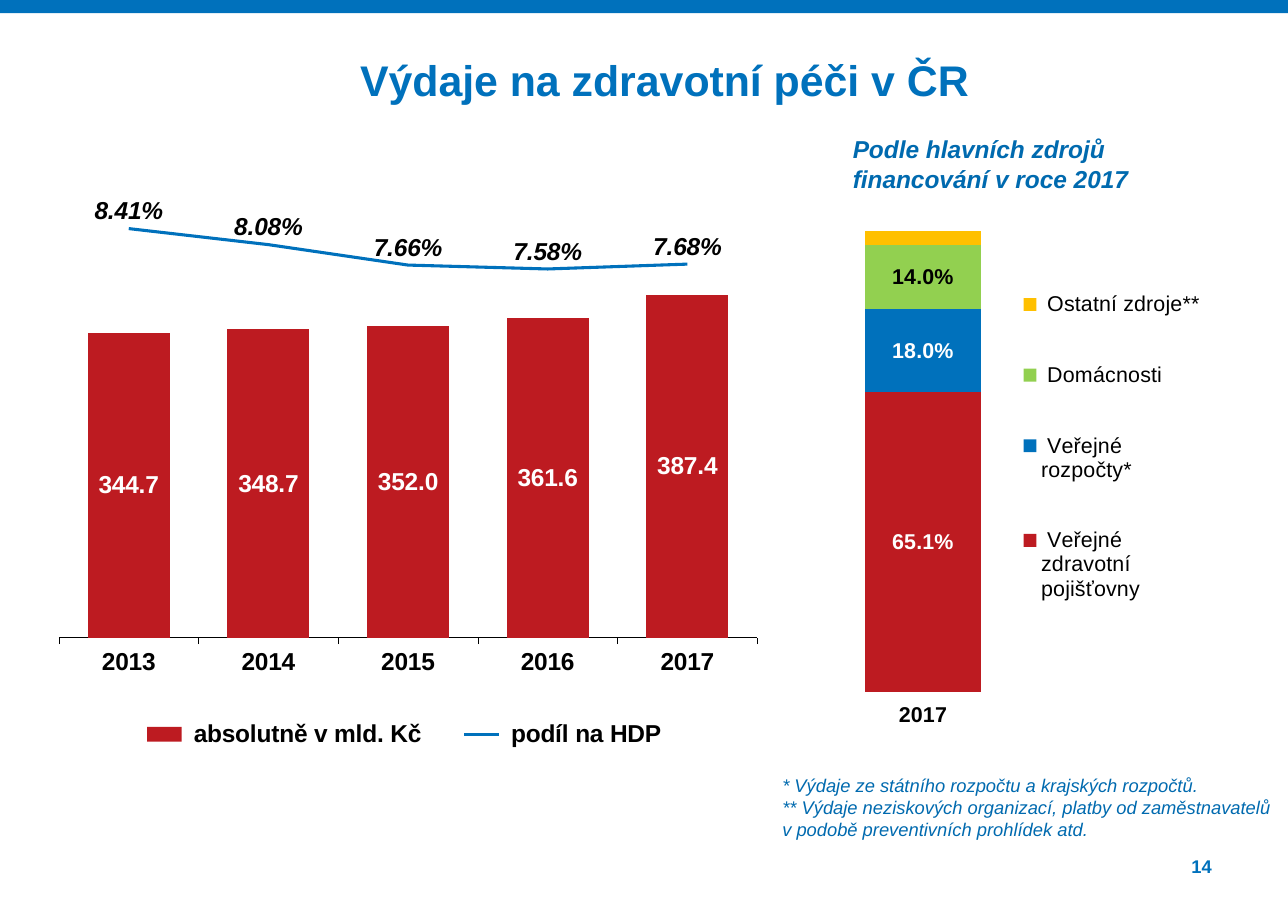
from pptx import Presentation
from pptx.chart.data import CategoryChartData
from pptx.dml.color import RGBColor
from pptx.enum.chart import (XL_CHART_TYPE as ChartType, XL_LABEL_POSITION as LabelPos,
                             XL_LEGEND_POSITION as LegendPos, XL_MARKER_STYLE as MarkerStyle,
                             XL_TICK_LABEL_POSITION as TickLabelPos, XL_TICK_MARK as TickMark)
from pptx.enum.shapes import MSO_SHAPE as Shape
from pptx.enum.text import PP_ALIGN as Align
from pptx.oxml import parse_xml
from pptx.oxml.ns import nsdecls, qn
from pptx.util import Inches, Pt

FONT = "Arial"
BLUE = RGBColor(0x00, 0x71, 0xBC)
DARK_BLUE = RGBColor(0x00, 0x6A, 0xAF)
RED = RGBColor(0xBD, 0x1B, 0x21)
GREEN = RGBColor(0x92, 0xD0, 0x50)
YELLOW = RGBColor(0xFF, 0xC0, 0x00)
BLACK = RGBColor(0, 0, 0)
WHITE = RGBColor(0xFF, 0xFF, 0xFF)

WIDTH, HEIGHT = Inches(11.69), Inches(8.27)


def area(left, top, width, height):
    """Turn percentages of the slide into lengths."""
    return (int(WIDTH * left / 100), int(HEIGHT * top / 100),
            int(WIDTH * width / 100), int(HEIGHT * height / 100))


def style_font(font, size, color=BLACK, bold=False, italic=False):
    font.name, font.size, font.bold, font.italic = FONT, Pt(size), bold, italic
    font.color.rgb = color


def add_text(page, place, lines, size, color, bold=False, italic=False, align=Align.LEFT):
    box = page.shapes.add_textbox(*area(*place))
    frame = box.text_frame
    frame.word_wrap = True
    frame.margin_left = frame.margin_right = frame.margin_top = frame.margin_bottom = 0
    frame.text = "\n".join(lines)
    for para in frame.paragraphs:
        para.alignment = align
        for span in para.runs:
            style_font(span.font, size, color, bold, italic)


def set_layout(parent, position, x, y, width, height, inner=False):
    """Place the plot area or the legend by shares of the chart."""
    for old in parent.findall(qn("c:layout")):
        parent.remove(old)
    target = '<c:layoutTarget val="inner"/>' if inner else ""
    parent.insert(position, parse_xml(
        f'<c:layout {nsdecls("c")}><c:manualLayout>{target}'
        '<c:xMode val="edge"/><c:yMode val="edge"/>'
        f'<c:x val="{x}"/><c:y val="{y}"/><c:w val="{width}"/><c:h val="{height}"/>'
        '</c:manualLayout></c:layout>'))


def add_bar_chart(page, place, kind, categories, rows, gap, plot_share,
                  legend_side, legend_share, legend_size, bold):
    data = CategoryChartData()
    data.categories = categories
    for name, values, number_format in rows:
        data.add_series(name, values, number_format)
    chart = page.shapes.add_chart(kind, *area(*place), data).chart
    style_font(chart.font, 16, bold=bold)
    chart.has_title = False
    chart.plots[0].gap_width = gap
    chart.plots[0].vary_by_categories = False

    values = chart.value_axis
    values.has_major_gridlines = False
    values.major_tick_mark = TickMark.NONE
    values.tick_label_position = TickLabelPos.NONE
    values.format.line.fill.background()
    chart.category_axis.major_tick_mark = TickMark.OUTSIDE
    set_layout(chart._chartSpace.chart.plotArea, 0, *plot_share, inner=True)

    chart.has_legend = True
    chart.legend.position = legend_side
    chart.legend.include_in_layout = False
    style_font(chart.legend.font, legend_size, bold=bold)
    set_layout(chart.legend._element, 1, *legend_share)
    return chart


def fill_series(series, color):
    series.format.fill.solid()
    series.format.fill.fore_color.rgb = color


def label_series(series, number_format, position, size, color, italic=False):
    labels = series.data_labels
    labels.show_value = True
    labels.number_format, labels.number_format_is_linked = number_format, False
    labels.position = position
    style_font(labels.font, size, color, True, italic)


def move_to_right_line(chart, maximum, step):
    """Turn the last bar series into a line on a second value axis."""
    plot_area = chart._chartSpace.chart.plotArea
    bars = plot_area.find(qn("c:barChart"))
    series = bars.findall(qn("c:ser"))[-1]
    for bar_only in series.findall(qn("c:invertIfNegative")):
        series.remove(bar_only)
    line = parse_xml(
        f'<c:lineChart {nsdecls("c")}><c:grouping val="standard"/><c:varyColors val="0"/>'
        '<c:marker val="1"/><c:axId val="501"/><c:axId val="502"/></c:lineChart>')
    line.insert(2, series)
    bars.addnext(line)
    axes = parse_xml(
        f'<c:axes {nsdecls("c", "a")}>'
        '<c:catAx><c:axId val="501"/><c:scaling><c:orientation val="minMax"/></c:scaling>'
        '<c:delete val="1"/><c:axPos val="b"/><c:crossAx val="502"/>'
        '<c:crosses val="autoZero"/></c:catAx>'
        '<c:valAx><c:axId val="502"/><c:scaling><c:orientation val="minMax"/>'
        f'<c:max val="{maximum}"/><c:min val="0"/></c:scaling><c:delete val="0"/>'
        '<c:axPos val="r"/><c:majorTickMark val="none"/><c:minorTickMark val="none"/>'
        '<c:tickLblPos val="none"/><c:spPr><a:ln><a:noFill/></a:ln></c:spPr>'
        f'<c:crossAx val="501"/><c:crosses val="max"/><c:majorUnit val="{step}"/></c:valAx>'
        '</c:axes>')
    last_axis = plot_area.findall(qn("c:valAx"))[-1]
    for axis in reversed(list(axes)):
        last_axis.addnext(axis)


def add_spending_chart(page):
    rows = [(" absolutně v mld. Kč", (344.7, 348.7, 352.0, 361.6, 387.4), "0.0"),
            (" podíl na HDP", (0.0841, 0.0808, 0.0766, 0.0758, 0.0768), "0.00%")]
    chart = add_bar_chart(page, (3.68, 14.75, 55.95, 71.58), ChartType.COLUMN_CLUSTERED,
                          ("2013", "2014", "2015", "2016", "2017"), rows, 70,
                          (0.016, 0.026, 0.969, 0.746), LegendPos.BOTTOM,
                          (0.09, 0.885, 0.81, 0.07), 16, True)
    chart.value_axis.minimum_scale, chart.value_axis.maximum_scale = 0, 550
    axis_line = chart.category_axis.format.line
    axis_line.color.rgb, axis_line.width = BLACK, Pt(0.25)
    move_to_right_line(chart, 0.1, 0.01)

    amount, share = (plot.series[0] for plot in chart.plots)
    fill_series(amount, RED)
    label_series(amount, "0.0", LabelPos.CENTER, 16, WHITE)
    share.format.line.color.rgb, share.format.line.width = BLUE, Pt(2)
    share.marker.style = MarkerStyle.NONE
    share.smooth = False
    label_series(share, "0.00%", LabelPos.ABOVE, 16, BLACK, italic=True)


def add_sources_chart(page):
    sources = [(" Veřejné zdravotní pojišťovny", 0.651, RED, WHITE),
               (" Veřejné rozpočty*", 0.18, BLUE, WHITE),
               (" Domácnosti", 0.14, GREEN, BLACK),
               (" Ostatní zdroje**", 0.03, YELLOW, None)]
    rows = [(name, (value,), "0.0%") for name, value, _, _ in sources]
    chart = add_bar_chart(page, (64.93, 23.58, 28.91, 57.19), ChartType.COLUMN_STACKED_100,
                          ("2017",), rows, 50, (0, 0.031, 0.466, 0.885),
                          LegendPos.RIGHT, (0.48, 0.06, 0.52, 0.77), 14, False)
    chart.plots[0].overlap = 100
    chart.category_axis.format.line.fill.background()
    style_font(chart.category_axis.tick_labels.font, 14, bold=True)
    for series, (_, _, color, label_color) in zip(chart.plots[0].series, sources):
        fill_series(series, color)
        if label_color is not None:
            label_series(series, "0.0%", LabelPos.CENTER, 14, label_color)


def main():
    deck = Presentation()
    deck.slide_width, deck.slide_height = WIDTH, HEIGHT
    page = deck.slides.add_slide(deck.slide_layouts[6])

    # Top band, title and page number
    band = page.shapes.add_shape(Shape.RECTANGLE, *area(0, 0, 100, 1.45))
    band.shadow.inherit = False
    band.fill.solid()
    band.fill.fore_color.rgb = BLUE
    band.line.fill.background()
    add_text(page, (87.42, 93.83, 6.67, 2.54), ["14"], 12, BLUE, bold=True, align=Align.RIGHT)
    add_text(page, (7.96, 5.93, 87.25, 8.83), ["Výdaje na zdravotní péči v ČR"], 28, BLUE,
             bold=True, align=Align.CENTER)

    # Charts
    add_spending_chart(page)
    add_sources_chart(page)

    # Heading and footnotes of the right chart
    add_text(page, (66.21, 14.75, 31.31, 4.72),
             ["Podle hlavních zdrojů", "financování v roce 2017"], 16, DARK_BLUE,
             bold=True, italic=True)
    add_text(page, (60.74, 85.01, 38.07, 6.65),
             ["* Výdaje ze státního rozpočtu a krajských rozpočtů.",
              "** Výdaje neziskových organizací, platby od zaměstnavatelů "
              "v podobě preventivních prohlídek atd."], 12, DARK_BLUE, italic=True)

    deck.save("out.pptx")


if __name__ == "__main__":
    main()
